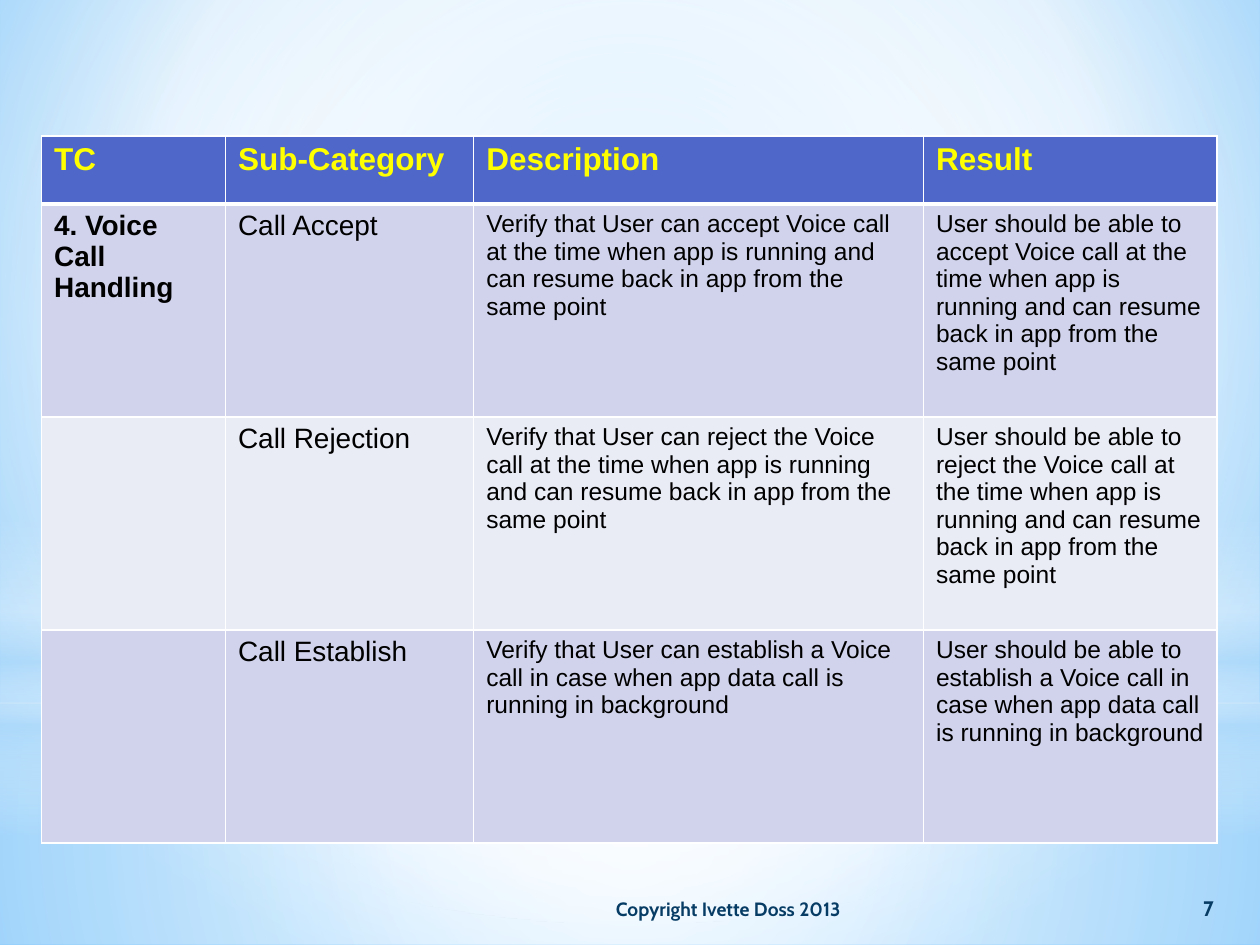
from dataclasses import dataclass
from pptx import Presentation
from pptx.dml.color import RGBColor
from pptx.enum.shapes import MSO_SHAPE
from pptx.enum.text import MSO_ANCHOR, PP_ALIGN
from pptx.oxml import parse_xml
from pptx.oxml.ns import nsdecls
from pptx.util import Inches, Pt


@dataclass(frozen=True)
class Theme:
    table_font: str = "Arial"
    footer_font: str = "Cabin"
    white: str = "FFFFFF"
    mist: str = "B4DCFA"
    header_fill: str = "4E67C8"
    header_text: str = "FFFF00"
    body_text: str = "000000"
    footer_text: str = "073C65"
    bands: tuple = ("D0D3EB", "E9EBF5")
    header_size: int = 18
    label_size: int = 16
    body_size: int = 14
    copyright_size: int = 11
    number_size: int = 12
    thin: int = 1
    thick: int = 3


THEME = Theme()
WIDTH, HEIGHT = 10, 7.5
CENTRE = (50, 50, 50, 50)
COLUMNS = (1.46, 1.97, 3.57, 2.33)
ROWS = (0.54, 1.69, 1.69, 1.69)
RESUME = "at the time when app is running and can resume back in app from the same point"
ESTABLISH = "establish a Voice call in case when app data call is running in background"
CONTENT = (
    ("TC", "Sub-Category", "Description", "Result"),
    ("4. Voice Call Handling", "Call Accept",
     f"Verify that User can accept Voice call {RESUME}",
     f"User should be able to accept Voice call {RESUME}"),
    ("", "Call Rejection",
     f"Verify that User can reject the Voice call {RESUME}",
     f"User should be able to reject the Voice call {RESUME}"),
    ("", "Call Establish",
     f"Verify that User can {ESTABLISH}",
     f"User should be able to {ESTABLISH}"),
)


def set_gradient(fill, owner, stops, focus=None):
    """Fill with (position, colour, opacity) stops: round if focus is given, else downward."""
    fill.gradient()
    marks = "".join(
        f'<a:gs pos="{position * 1000}"><a:srgbClr val="{colour}">'
        f'<a:alpha val="{opacity * 1000}"/></a:srgbClr></a:gs>'
        for position, colour, opacity in stops)
    if focus:
        sides = " ".join(f'{side}="{share * 1000}"' for side, share in zip("ltrb", focus))
        path = f'<a:path path="circle"><a:fillToRect {sides}/></a:path>'
    else:
        path = '<a:lin ang="5400000" scaled="0"/>'
    old = owner.xpath(".//a:gradFill")[0]
    old.getparent().replace(old, parse_xml(
        f'<a:gradFill {nsdecls("a")} rotWithShape="1"><a:gsLst>{marks}</a:gsLst>{path}</a:gradFill>'))


def add_glow(page, kind, top, height, stops, focus=CENTRE):
    """Add a full-width soft gradient; top and height are shares of the slide height."""
    glow = page.shapes.add_shape(kind, 0, Inches(top * HEIGHT), Inches(WIDTH), Inches(height * HEIGHT))
    glow.shadow.inherit = False
    glow.line.fill.background()
    set_gradient(glow.fill, glow.element, stops, focus)


def style_text(paragraph, text, font, size, colour, bold):
    paragraph.text = text
    paragraph.font.name = font
    paragraph.font.size = Pt(size)
    paragraph.font.bold = bold
    paragraph.font.color.rgb = RGBColor.from_string(colour)


def add_footer(page, left, width, text, size, align):
    box = page.shapes.add_textbox(Inches(left), Inches(7.01), Inches(width), Inches(0.4))
    box.text_frame.word_wrap = True
    box.text_frame.vertical_anchor = MSO_ANCHOR.MIDDLE
    paragraph = box.text_frame.paragraphs[0]
    style_text(paragraph, text, THEME.footer_font, size, THEME.footer_text, True)
    paragraph.alignment = align


def set_borders(cell, top, bottom):
    properties = cell._tc.get_or_add_tcPr()
    for side, width in zip("LRTB", (THEME.thin, THEME.thin, top, bottom)):
        properties.append(parse_xml(
            f'<a:ln{side} {nsdecls("a")} w="{Pt(width)}"><a:solidFill>'
            f'<a:srgbClr val="{THEME.white}"/></a:solidFill></a:ln{side}>'))


def fill_cell(cell, row, column, text):
    header = row == 0
    # The heavy rule lies between the header and the first body row
    set_borders(cell, THEME.thick if row == 1 else THEME.thin, THEME.thick if header else THEME.thin)
    cell.fill.solid()
    colour = THEME.header_fill if header else THEME.bands[(row - 1) % 2]
    cell.fill.fore_color.rgb = RGBColor.from_string(colour)
    if header:
        size = THEME.header_size
    else:
        size = THEME.label_size if column < 2 else THEME.body_size
    style_text(cell.text_frame.paragraphs[0], text, THEME.table_font, size,
               THEME.header_text if header else THEME.body_text, header or column == 0)


def add_test_table(page):
    table = page.shapes.add_table(len(ROWS), len(COLUMNS), Inches(0.33), Inches(1.08),
                                  Inches(sum(COLUMNS)), Inches(sum(ROWS))).table
    for column, width in zip(table.columns, COLUMNS):
        column.width = Inches(width)
    for row, height in zip(table.rows, ROWS):
        row.height = Inches(height)
    for row, texts in enumerate(CONTENT):
        for column, text in enumerate(texts):
            fill_cell(table.cell(row, column), row, column, text)


def add_backdrop(page):
    white, mist = THEME.white, THEME.mist
    set_gradient(page.background.fill, page.element,
                 ((0, "9ED5FF", 100), (60, white, 100), (100, "5BB9FF", 100)), (20, 10, 20, 60))
    # Ground, sky, horizon bands and the central light
    add_glow(page, MSO_SHAPE.RECTANGLE, 0.744, 0.256,
             ((0, white, 91), (37, white, 76), (100, mist, 79)))
    add_glow(page, MSO_SHAPE.RECTANGLE, 0, 0.744,
             ((0, white, 89), (48, white, 62), (100, mist, 79)))
    add_glow(page, MSO_SHAPE.RECTANGLE, 0.55, 0.333,
             ((0, white, 0), (29, white, 30), (45, mist, 40),
              (55, white, 26), (65, mist, 60), (100, white, 0)), None)
    add_glow(page, MSO_SHAPE.OVAL, 0.233, 0.744, ((0, white, 100), (56, white, 0)))


def main():
    deck = Presentation()
    deck.slide_width, deck.slide_height = Inches(WIDTH), Inches(HEIGHT)
    page = deck.slides.add_slide(deck.slide_layouts[6])
    add_backdrop(page)
    add_footer(page, 4.79, 4.54, "Copyright Ivette Doss 2013", THEME.copyright_size, PP_ALIGN.LEFT)
    add_footer(page, 9.33, 0.52, "7", THEME.number_size, PP_ALIGN.CENTER)
    add_test_table(page)
    deck.save("out.pptx")


if __name__ == "__main__":
    main()
